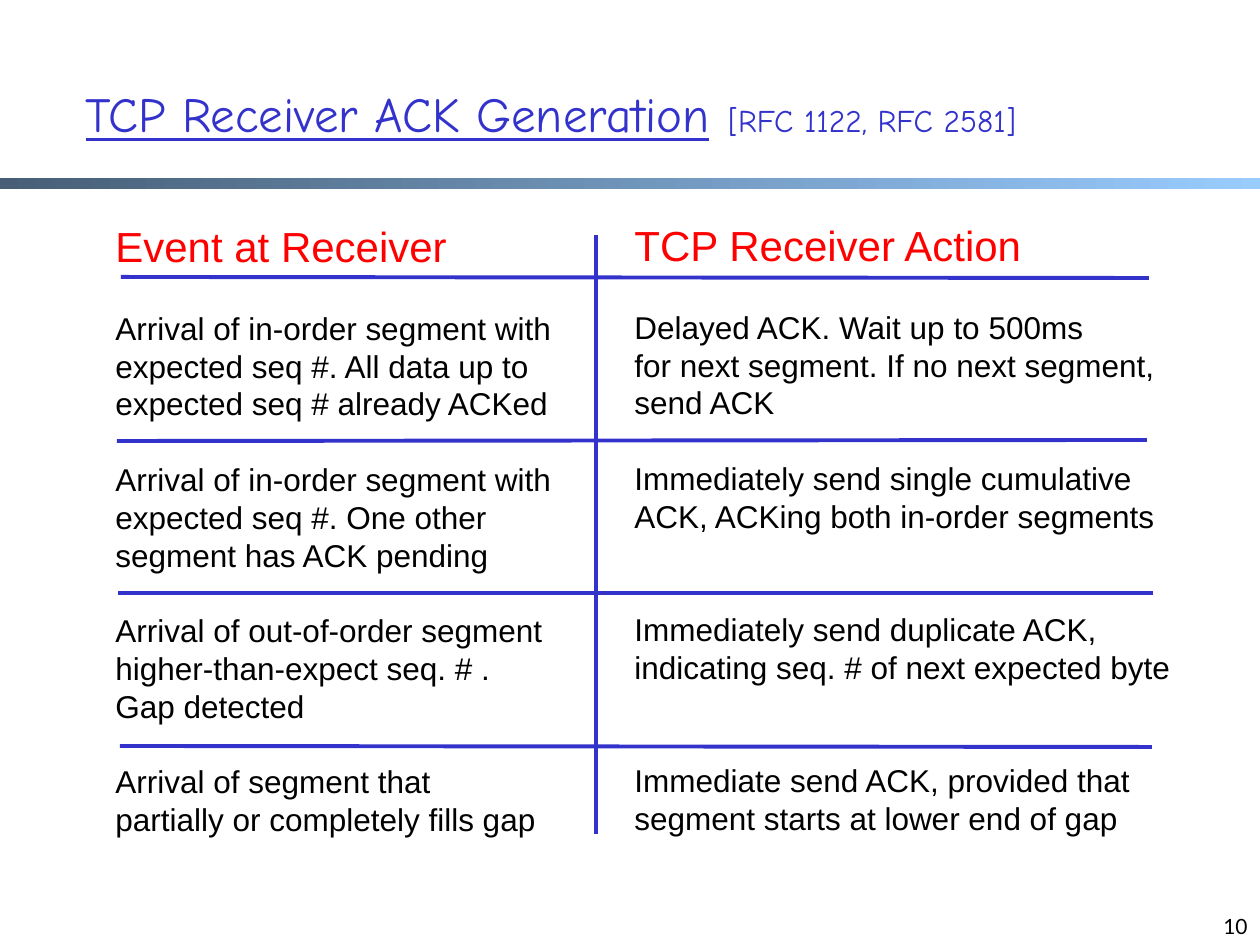
from lxml.etree import SubElement
from pptx import Presentation
from pptx.dml.color import RGBColor
from pptx.enum.shapes import MSO_CONNECTOR, MSO_SHAPE
from pptx.enum.text import MSO_ANCHOR, MSO_AUTO_SIZE, PP_ALIGN
from pptx.oxml.ns import qn
from pptx.util import Emu, Pt

COLORS = {
    "blue": "3333CC",
    "red": "FF0000",
    "black": "000000",
    "bar_start": "475E76",
    "bar_end": "99CCFF",
}
LINE_PITCH = 21.6
ROW_LINES = 4


def px(*lengths):
    return [Emu(round(length * 914400 / 126)) for length in lengths]


def add_text(paragraph, text, color, **formats):
    run = paragraph.add_run()
    run.text = text
    run.font.color.rgb = RGBColor.from_string(COLORS[color])
    for name, value in formats.items():
        setattr(run.font, name, value)


deck = Presentation()
deck.slide_width, deck.slide_height = px(1260, 945)
slide = deck.slides.add_slide(deck.slide_layouts[5])

bar = slide.shapes.add_shape(MSO_SHAPE.RECTANGLE, *px(0, 178, 1260, 11))
bar.shadow.inherit = False
bar.line.fill.background()
bar.fill.gradient()
bar.fill.gradient_angle = 0
for stop, end in zip(bar.fill.gradient_stops, ("bar_start", "bar_end")):
    stop.color.rgb = RGBColor.from_string(COLORS[end])

title = slide.shapes.title
title.left, title.top, title.width, title.height = px(73, 32, 1071, 157)
title.text_frame.vertical_anchor = MSO_ANCHOR.MIDDLE
title.text_frame.auto_size = MSO_AUTO_SIZE.NONE
heading = title.text_frame.paragraphs[0]
heading.alignment = PP_ALIGN.LEFT
for text, size, underline in [
    ("TCP Receiver ACK Generation", 28, True),
    (" ", 32, False),
    ("[RFC 1122, RFC 2581]", 18, False),
]:
    add_text(heading, text, "blue", size=Pt(size), name="Comic Neue", underline=underline)

columns = [
    ((103, 214, 461, 689), "Event at Receiver", [
        ["Arrival of in-order segment with",
         "expected seq #. All data up to",
         "expected seq # already ACKed"],
        ["Arrival of in-order segment with",
         "expected seq #. One other",
         "segment has ACK pending"],
        ["Arrival of out-of-order segment",
         "higher-than-expect seq. # .",
         "Gap detected"],
        ["Arrival of segment that",
         "partially or completely fills gap"],
    ]),
    ((622, 213, 561, 689), "TCP Receiver Action", [
        ["Delayed ACK. Wait up to 500ms",
         "for next segment. If no next segment,",
         "send ACK"],
        ["Immediately send single cumulative",
         "ACK, ACKing both in-order segments"],
        ["Immediately send duplicate ACK,",
         "indicating seq. # of next expected byte"],
        ["Immediate send ACK, provided that",
         "segment starts at lower end of gap"],
    ]),
]
for place, header, cases in columns:
    column = slide.shapes.add_textbox(*px(*place)).text_frame
    column.word_wrap = False
    header_line = column.paragraphs[0]
    header_line.line_spacing = Pt(29)
    add_text(header_line, header, "red", size=Pt(24), name="Arial")
    gap_lines = 1
    for case in cases:
        for index, text in enumerate(case):
            line = column.add_paragraph()
            line.line_spacing = Pt(LINE_PITCH)
            line.space_before = Pt(0 if index else gap_lines * LINE_PITCH)
            add_text(line, text, "black", size=Pt(18), name="Arial")
        gap_lines = ROW_LINES - len(case)

for ends in [
    (121, 277, 1149, 278),
    (117, 441, 1147, 440),
    (118, 593, 1153, 593),
    (120, 746, 1152, 747),
    (596, 235, 596, 834),
]:
    rule = slide.shapes.add_connector(MSO_CONNECTOR.STRAIGHT, *px(*ends))
    rule.line.color.rgb = RGBColor.from_string(COLORS["blue"])
    rule.line.width = Pt(2.25)
    SubElement(rule._element.spPr, qn("a:effectLst"))

page = slide.shapes.add_textbox(*px(966, 882, 294, 63)).text_frame
page.word_wrap = True
page.vertical_anchor = MSO_ANCHOR.BOTTOM
page.paragraphs[0].alignment = PP_ALIGN.RIGHT
add_text(page.paragraphs[0], "10", "black", size=Pt(12), name="Lato")

deck.save("out.pptx")
